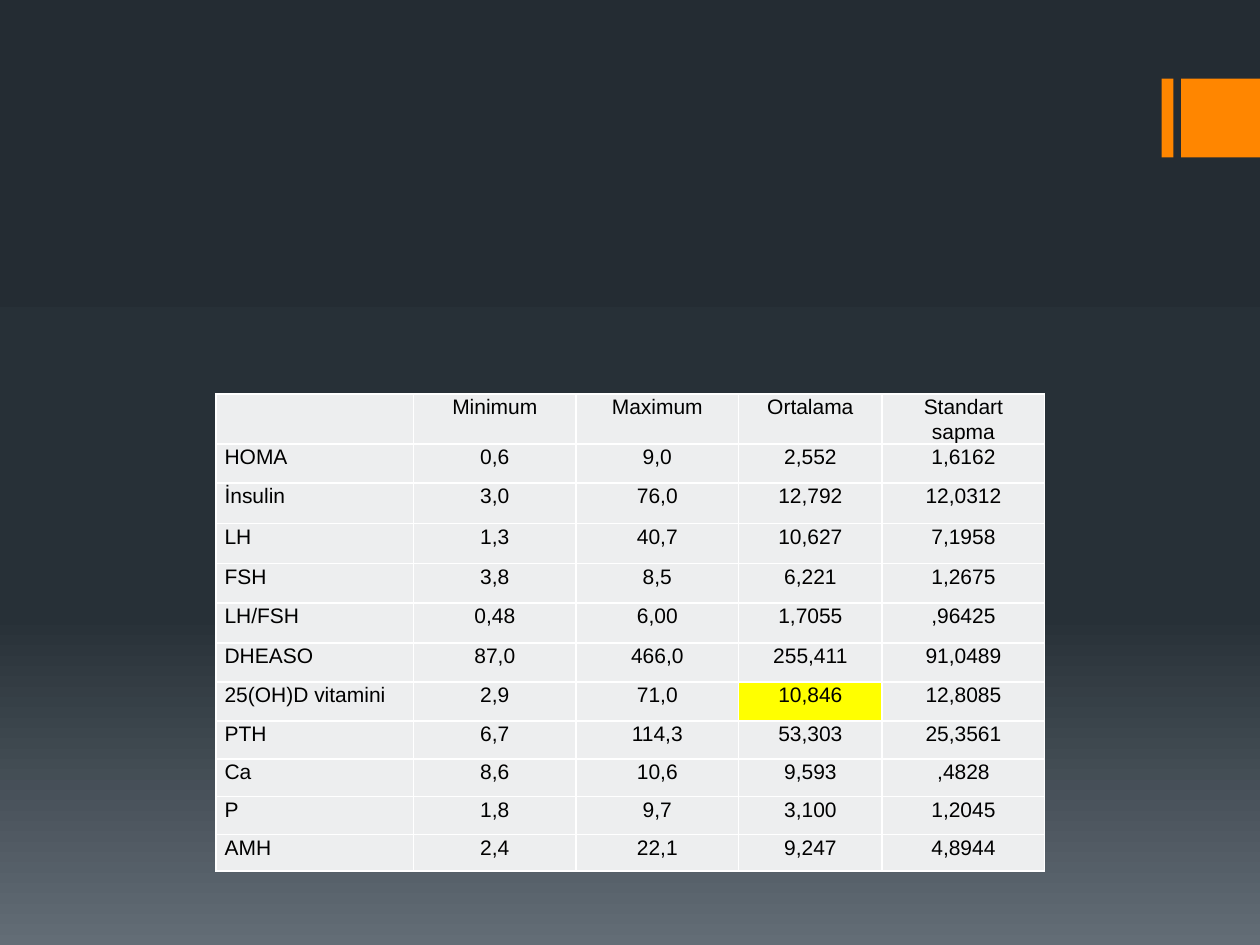
from pptx import Presentation
from pptx.dml.color import RGBColor
from pptx.enum.shapes import MSO_SHAPE
from pptx.enum.text import PP_ALIGN
from pptx.oxml import parse_xml
from pptx.oxml.ns import nsdecls
from pptx.util import Inches, Pt

COLUMN_WIDTHS = [1.57, 1.29, 1.29, 1.14, 1.29]
ROW_HEIGHTS = [0.3, 0.31, 0.32, 0.32, 0.31, 0.32, 0.31, 0.31, 0.3, 0.3, 0.3, 0.29]
STATISTICS = [
    ["", "Minimum", "Maximum", "Ortalama", "Standart sapma"],
    ["HOMA", "0,6", "9,0", "2,552", "1,6162"],
    ["İnsulin", "3,0", "76,0", "12,792", "12,0312"],
    ["LH", "1,3", "40,7", "10,627", "7,1958"],
    ["FSH", "3,8", "8,5", "6,221", "1,2675"],
    ["LH/FSH", "0,48", "6,00", "1,7055", ",96425"],
    ["DHEASO", "87,0", "466,0", "255,411", "91,0489"],
    ["25(OH)D vitamini", "2,9", "71,0", "10,846", "12,8085"],
    ["PTH", "6,7", "114,3", "53,303", "25,3561"],
    ["Ca", "8,6", "10,6", "9,593", ",4828"],
    ["P", "1,8", "9,7", "3,100", "1,2045"],
    ["AMH", "2,4", "22,1", "9,247", "4,8944"],
]
HIGHLIGHT = (7, 3)


def paint(fill, color):
    fill.solid()
    fill.fore_color.rgb = RGBColor.from_string(color)


class SlideBuilder:
    """Holds the style and the current slide, laid out on 16 columns by 12 rows."""

    font, size, ink = "Arial", 12, "000000"
    accent, cell_fill, highlight, border = "FF8600", "EDEEEF", "FFFF00", "FFFFFF"
    unit = 0.625

    def __init__(self):
        self.deck = Presentation()
        self.deck.slide_width = self.grid(16)
        self.deck.slide_height = self.grid(12)
        self.page = self.deck.slides.add_slide(self.deck.slide_layouts[6])

    def grid(self, count):
        return Inches(count * self.unit)

    def background(self, stops):
        marks = "".join(
            f'<a:gs pos="{share * 1000}"><a:srgbClr val="{color}"/></a:gs>'
            for share, color in stops
        )
        self.page.element.cSld.insert(0, parse_xml(
            f'<p:bg {nsdecls("p", "a")}><p:bgPr><a:gradFill rotWithShape="1">'
            f'<a:gsLst>{marks}</a:gsLst><a:lin ang="5400000" scaled="0"/>'
            '</a:gradFill><a:effectLst/></p:bgPr></p:bg>'
        ))

    def block(self, column, row, width, height):
        shape = self.page.shapes.add_shape(
            MSO_SHAPE.RECTANGLE, *map(self.grid, (column, row, width, height)))
        shape.shadow.inherit = False
        shape.line.fill.background()
        paint(shape.fill, self.accent)

    def table(self, column, row, values, widths, heights, marked):
        table = self.page.shapes.add_table(
            len(values), len(widths), self.grid(column), self.grid(row),
            Inches(sum(widths)), Inches(sum(heights))).table
        table.first_row = table.horz_banding = False
        for table_column, width in zip(table.columns, widths):
            table_column.width = Inches(width)
        for table_row, height in zip(table.rows, heights):
            table_row.height = Inches(height)
        for r, line in enumerate(values):
            for c, text in enumerate(line):
                color = self.highlight if (r, c) == marked else self.cell_fill
                align = PP_ALIGN.CENTER if c else PP_ALIGN.LEFT
                self.cell(table.cell(r, c), text, color, align)

    def cell(self, cell, text, color, align):
        cell.margin_left = cell.margin_right = Inches(0.07)
        cell.margin_top = cell.margin_bottom = 0
        para = cell.text_frame.paragraphs[0]
        para.alignment, para.line_spacing = align, 1.07
        if text:
            span = para.add_run()
            span.text = text
            span.font.name, span.font.size = self.font, Pt(self.size)
            span.font.color.rgb = RGBColor.from_string(self.ink)
        properties = cell._tc.get_or_add_tcPr()
        for side in ("lnL", "lnR", "lnT", "lnB"):
            properties.append(parse_xml(
                f'<a:{side} {nsdecls("a")} w="{Pt(1)}"><a:solidFill>'
                f'<a:srgbClr val="{self.border}"/></a:solidFill></a:{side}>'))
        paint(cell.fill, color)


def main():
    builder = SlideBuilder()
    builder.background([(0, "242C33"), (65, "273037"), (100, "636D76")])
    builder.block(14.75, 1, 0.15, 1)
    builder.block(15, 1, 1, 1)
    builder.table(2.74, 5, STATISTICS, COLUMN_WIDTHS, ROW_HEIGHTS, HIGHLIGHT)
    builder.deck.save("out.pptx")


if __name__ == "__main__":
    main()
